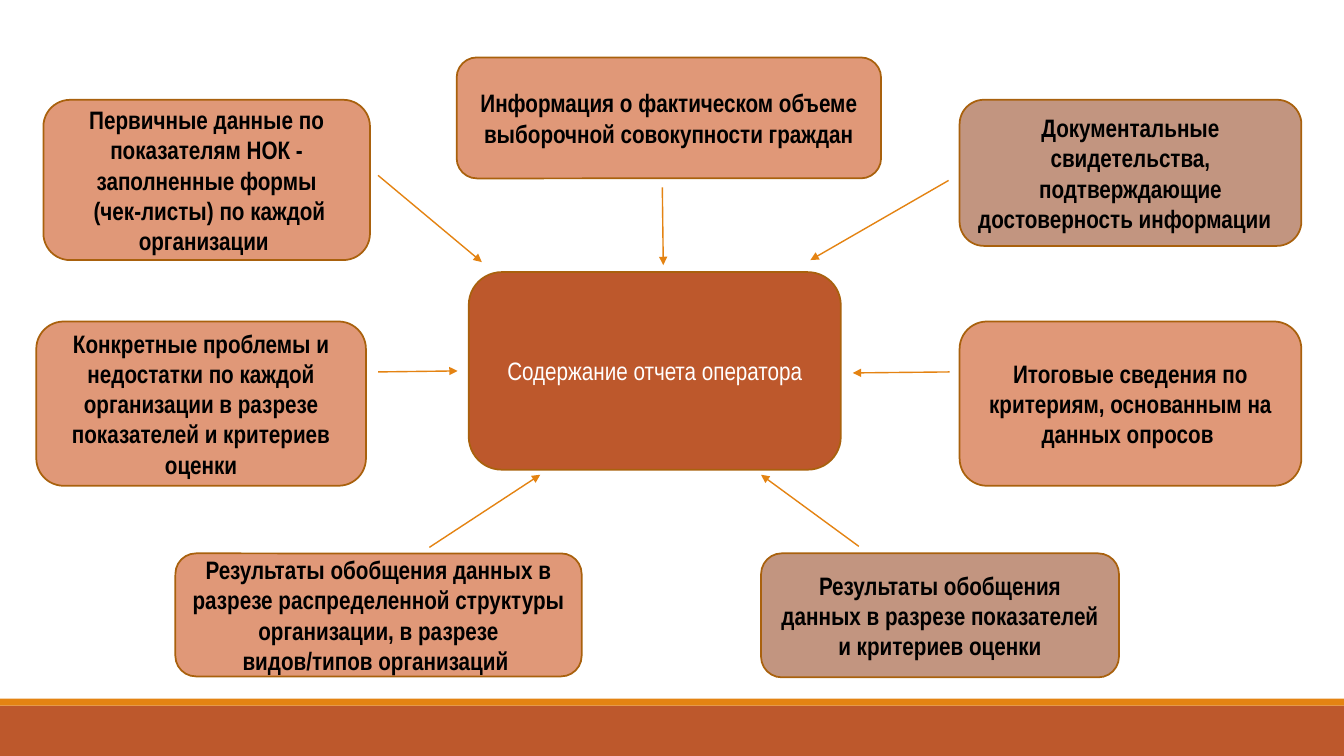
from pptx import Presentation
from pptx.dml.color import RGBColor
from pptx.enum.shapes import MSO_CONNECTOR, MSO_SHAPE
from pptx.enum.text import MSO_ANCHOR, PP_ALIGN
from pptx.oxml.ns import qn
from pptx.util import Inches, Pt
from lxml import etree

RECT, ROUND = MSO_SHAPE.RECTANGLE, MSO_SHAPE.ROUNDED_RECTANGLE
STRAIGHT = MSO_CONNECTOR.STRAIGHT
MIDDLE, CENTER = MSO_ANCHOR.MIDDLE, PP_ALIGN.CENTER

RUST = RGBColor(0xBD, 0x58, 0x2C)
ORANGE = RGBColor(0xE4, 0x83, 0x12)
BROWN = RGBColor(0xA9, 0x61, 0x0D)
PEACH = RGBColor(0xE0, 0x98, 0x78)
TAUPE = RGBColor(0xC2, 0x95, 0x80)
WHITE = RGBColor(0xFF, 0xFF, 0xFF)
BLACK = RGBColor(0, 0, 0)

# Places are left, top, width, height in percent of the slide.
BANDS = [((0, 93.33, 100, 6.67), RUST), ((0, 92.4, 100, 0.93), ORANGE)]
HUB = (34.88, 36, 27.68, 26.13)
TOPICS = [
    ((3.23, 13.2, 24.3, 21.2), PEACH,
     ["Первичные данные по показателям НОК - заполненные формы",
      " (чек-листы) по каждой организации "]),
    ((71.4, 42.53, 25.43, 21.73), PEACH,
     ["Итоговые сведения по критериям, основанным на данных опросов "]),
    ((71.4, 13.2, 25.43, 19.33), TAUPE,
     ["Документальные свидетельства, подтверждающие "
      "достоверность информации  "]),
    ((56.63, 73.2, 26.63, 16.4), TAUPE,
     ["Результаты обобщения данных в разрезе показателей "
      "и критериев оценки"]),
    ((13.05, 73.2, 30.23, 16.27), PEACH,
     ["Результаты обобщения данных в разрезе распределенной структуры "
      "организации, в разрезе видов/типов организаций "]),
    ((33.98, 7.6, 31.58, 16), PEACH,
     ["Информация о фактическом объеме выборочной совокупности граждан"]),
    ((2.7, 42.53, 24.53, 21.73), PEACH,
     ["Конкретные проблемы и недостатки по каждой организации "
      "в разрезе показателей и критериев оценки"]),
]
# Start x, y and end x, y in percent of the slide.
ARROWS = [
    (31.95, 72.4, 40.2, 62.8),
    (28.13, 23.2, 35.85, 34.67),
    (28.13, 49.2, 34.05, 49.07),
    (49.28, 24.8, 49.35, 35.07),
    (70.58, 23.87, 60.3, 34.4),
    (70.65, 49.2, 63.45, 49.33),
    (63.9, 72.27, 56.63, 62.8),
]


class Board:
    font = "Arial Narrow"
    size = Pt(18)
    edge = Pt(1.25)

    def __init__(self, deck):
        self.wide, self.high = deck.slide_width, deck.slide_height
        self.shapes = deck.slides.add_slide(deck.slide_layouts[6]).shapes

    def scale(self, place):
        """Turn alternating x and y percentages into lengths."""
        return [round(part * side / 100) for part, side
                in zip(place, (self.wide, self.high) * 2)]

    def block(self, kind, place, fill):
        shape = self.shapes.add_shape(kind, *self.scale(place))
        shape.shadow.inherit = False
        shape.fill.solid()
        shape.fill.fore_color.rgb = fill
        shape.line.fill.background()
        return shape

    def card(self, place, fill, lines, color=BLACK, bold=True):
        shape = self.block(ROUND, place, fill)
        shape.line.color.rgb = BROWN
        shape.line.width = self.edge
        frame = shape.text_frame
        frame.word_wrap = True
        frame.vertical_anchor = MIDDLE
        frame.text = "\n".join(lines)
        for para in frame.paragraphs:
            para.alignment = CENTER
            font = para.font
            font.name, font.size, font.bold = self.font, self.size, bold
            font.color.rgb = color

    def arrow(self, ends):
        link = self.shapes.add_connector(STRAIGHT, *self.scale(ends))
        link.line.color.rgb = ORANGE
        link.line.width = Pt(1)
        etree.SubElement(link.line._get_or_add_ln(), qn("a:tailEnd"),
                         type="triangle")
        etree.SubElement(link._element.spPr, qn("a:effectLst"))


def main():
    deck = Presentation()
    deck.slide_width, deck.slide_height = Inches(13.33), Inches(7.5)
    board = Board(deck)
    for place, fill in BANDS:
        board.block(RECT, place, fill)
    board.card(HUB, RUST, ["Содержание отчета оператора"], WHITE, False)
    for place, fill, lines in TOPICS:
        board.card(place, fill, lines)
    for ends in ARROWS:
        board.arrow(ends)
    deck.save("out.pptx")


if __name__ == "__main__":
    main()
